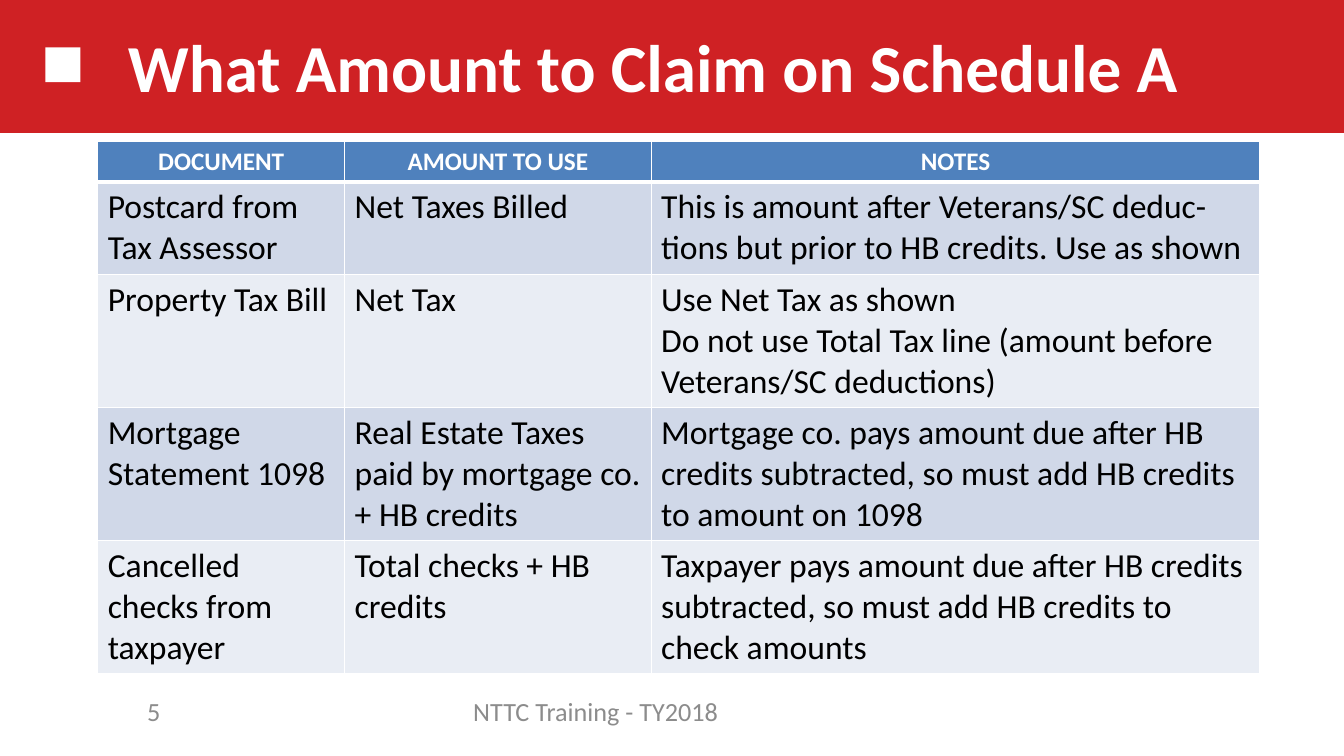
from dataclasses import dataclass

import pptx
import pptx.dml.color
import pptx.enum.shapes
import pptx.enum.text
import pptx.oxml
import pptx.util
from lxml import etree

Pt = pptx.util.Pt
ALIGN = pptx.enum.text.PP_ALIGN
MIDDLE = pptx.enum.text.MSO_ANCHOR.MIDDLE
DRAWING_NS = "http://schemas.openxmlformats.org/drawingml/2006/main"
FONT = "Calibri"
WHITE, RED, BLUE, GRAY, BLACK = "FFFFFF", "CF2124", "4F81BD", "8C8C8C", "000000"
ROW_FILLS = ("D0D8E8", "E9EDF4")


@dataclass
class Block:
    left: float
    top: float
    width: float
    height: float
    fill: str


@dataclass
class Label:
    text: str
    left: float
    width: float
    align: ALIGN


@dataclass
class Row:
    height: float
    cells: tuple[str, str, str]


BLOCKS = (
    Block(0, -0.5, 960, 95.5, RED),
    Block(32.4, 33.8, 25, 25, WHITE),
)
LABELS = (
    Label("NTTC Training - TY2018", 273.6, 303.8, ALIGN.CENTER),
    Label("5", 48.2, 73.4, ALIGN.RIGHT),
)
COLUMN_WIDTHS = (176.4, 218.9, 434.9)
ROWS = (
    Row(29.2, ("DOCUMENT", "AMOUNT TO USE", "NOTES")),
    Row(65.5, ("Postcard from Tax Assessor", "Net Taxes Billed",
               "This is amount after Veterans/SC deduc- tions but prior to "
               "HB credits. Use as shown")),
    Row(95, ("Property Tax Bill", "Net Tax",
             "Use Net Tax as shown\nDo not use Total Tax line (amount before "
             "Veterans/SC deductions)")),
    Row(95, ("Mortgage Statement 1098",
             "Real Estate Taxes paid by mortgage co. + HB credits",
             "Mortgage co. pays amount due after HB credits subtracted, "
             "so must add HB credits to amount on 1098")),
    Row(95, ("Cancelled checks from taxpayer", "Total checks + HB credits",
             "Taxpayer pays amount due after HB credits subtracted, "
             "so must add HB credits to check amounts")),
)


def rgb(color: str) -> pptx.dml.color.RGBColor:
    return pptx.dml.color.RGBColor.from_string(color)


def write(frame, text: str, size: float, color: str, align: ALIGN,
          bold: bool = False) -> None:
    for index, line in enumerate(text.split("\n")):
        para = frame.add_paragraph() if index else frame.paragraphs[0]
        para.alignment = align
        span = para.add_run()
        span.text = line
        span.font.name = FONT
        span.font.size = Pt(size)
        span.font.bold = bold
        span.font.color.rgb = rgb(color)


def add_block(page, block: Block) -> None:
    shape = page.shapes.add_shape(
        pptx.enum.shapes.MSO_SHAPE.RECTANGLE, Pt(block.left), Pt(block.top),
        Pt(block.width), Pt(block.height))
    shape.shadow.inherit = False
    shape.fill.solid()
    shape.fill.fore_color.rgb = rgb(block.fill)
    shape.line.fill.background()


def add_label(page, label: Label) -> None:
    box = page.shapes.add_textbox(
        Pt(label.left), Pt(493.2), Pt(label.width), Pt(28.8))
    box.text_frame.word_wrap = True
    box.text_frame.vertical_anchor = MIDDLE
    write(box.text_frame, label.text, 18.7, GRAY, label.align)


def set_borders(cell, top: float, bottom: float) -> None:
    properties = cell._tc.get_or_add_tcPr()
    widths = {"lnL": 1, "lnR": 1, "lnT": top, "lnB": bottom}
    for index, (side, width) in enumerate(widths.items()):
        properties.insert(index, pptx.oxml.parse_xml(
            f'<a:{side} xmlns:a="{DRAWING_NS}" w="{Pt(width)}"><a:solidFill>'
            f'<a:srgbClr val="{WHITE}"/></a:solidFill></a:{side}>'))


def add_title(page, text: str) -> None:
    title = page.shapes.title
    title.left, title.top = Pt(84.2), Pt(2.2)
    title.width, title.height = Pt(767.5), Pt(90)
    title.text_frame.word_wrap = True
    title.text_frame.vertical_anchor = MIDDLE
    write(title.text_frame, text, 48, WHITE, ALIGN.LEFT, bold=True)
    # Bring the title in front of the red band
    page.shapes._spTree.append(title._element)


def add_amount_table(page) -> None:
    table = page.shapes.add_table(
        len(ROWS), len(COLUMN_WIDTHS), Pt(69.8), Pt(100.8),
        Pt(sum(COLUMN_WIDTHS)), Pt(sum(row.height for row in ROWS))).table
    for column, width in zip(table.columns, COLUMN_WIDTHS):
        column.width = Pt(width)
    for index, row in enumerate(ROWS):
        table.rows[index].height = Pt(row.height)
        header = index == 0
        for position, text in enumerate(row.cells):
            cell = table.cell(index, position)
            cell.fill.solid()
            cell.fill.fore_color.rgb = rgb(BLUE if header else ROW_FILLS[(index - 1) % 2])
            set_borders(cell, 3 if index == 1 else 1, 3 if header else 1)
            if header:
                write(cell.text_frame, text, 18, WHITE, ALIGN.CENTER, bold=True)
            else:
                write(cell.text_frame, text, 24, BLACK, ALIGN.LEFT)


def main() -> None:
    deck = pptx.Presentation()
    deck.slide_width, deck.slide_height = Pt(960), Pt(540)
    page = deck.slides.add_slide(deck.slide_layouts[5])

    # Title band and square marker
    for block in BLOCKS:
        add_block(page, block)

    # Footer and page number
    for label in LABELS:
        add_label(page, label)

    # Title and table
    add_title(page, "What Amount to Claim on Schedule A")
    add_amount_table(page)
    deck.save("out.pptx")


if __name__ == "__main__":
    main()
